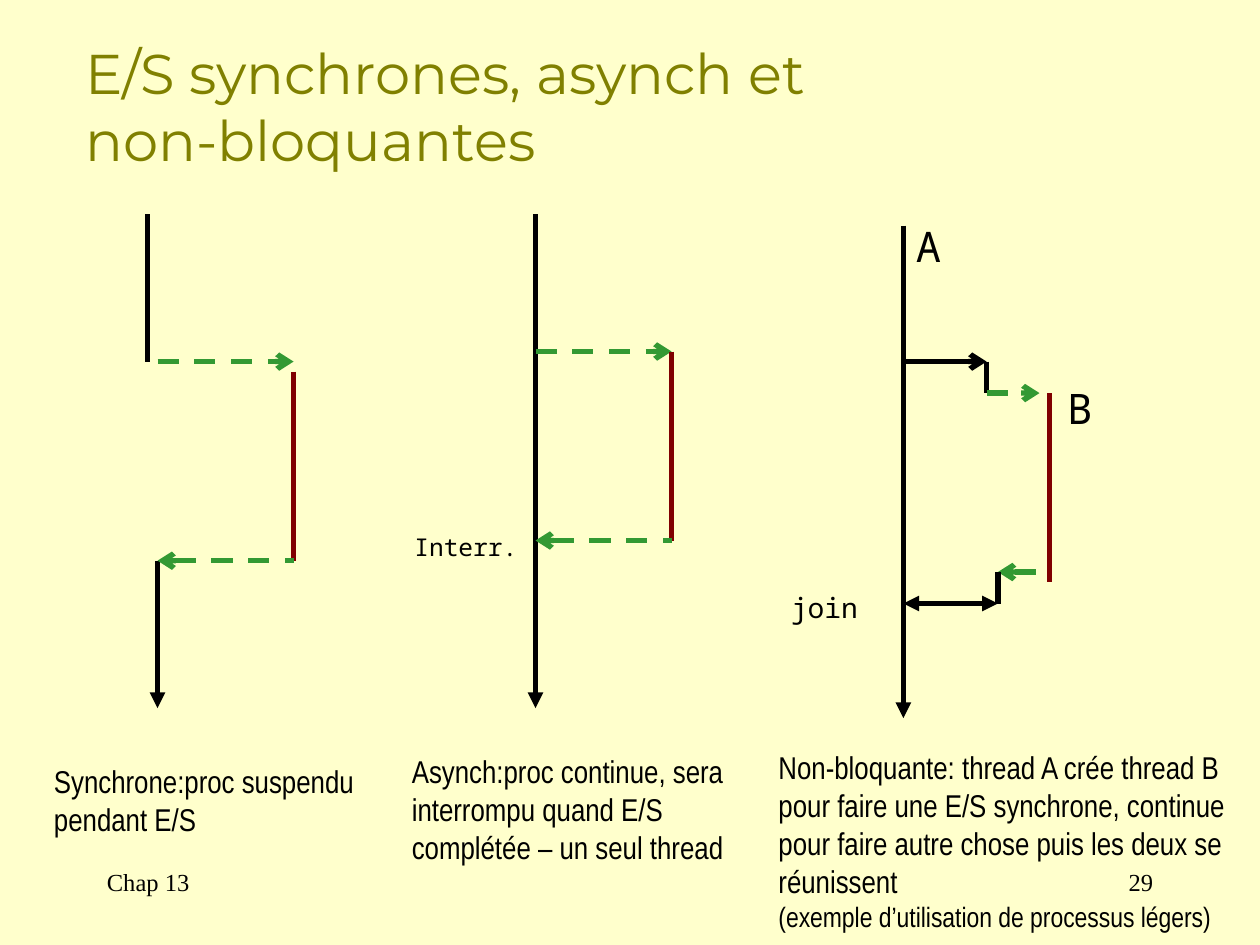
from lxml.etree import SubElement
from pptx import Presentation
from pptx.dml.color import RGBColor
from pptx.enum.dml import MSO_LINE
from pptx.enum.shapes import MSO_CONNECTOR
from pptx.enum.text import MSO_ANCHOR, PP_ALIGN
from pptx.oxml.ns import qn
from pptx.util import Inches, Pt

CREAM = RGBColor(0xFF, 0xFF, 0xCC)
OLIVE = RGBColor(0x80, 0x80, 0x00)
BLACK = RGBColor(0x00, 0x00, 0x00)
MAROON = RGBColor(0x80, 0x00, 0x00)
GREEN = RGBColor(0x33, 0x99, 0x33)

SERIF = "Times New Roman"
NARROW = "Arial Narrow"
MONO = "Noto Sans Mono"


def add_text(slide, box, lines, font, color=BLACK, align=PP_ALIGN.LEFT,
             anchor=MSO_ANCHOR.TOP):
    """Add a text box; lines holds (text, size) for each paragraph."""
    frame = slide.shapes.add_textbox(*map(Inches, box)).text_frame
    frame.word_wrap = True
    frame.vertical_anchor = anchor
    for i, (text, size) in enumerate(lines):
        para = frame.add_paragraph() if i else frame.paragraphs[0]
        para.text = text
        para.alignment = align
        para.font.name = font
        para.font.size = Pt(size)
        para.font.color.rgb = color


def add_line(slide, start, end, color=BLACK, head=None, tail=None, dash=False):
    """Add a straight line; head is the arrow at start, tail at end."""
    line = slide.shapes.add_connector(
        MSO_CONNECTOR.STRAIGHT, *map(Inches, start + end))
    line.line.color.rgb = color
    line.line.width = Pt(3)
    if dash:
        line.line.dash_style = MSO_LINE.DASH
    props = line.line._get_or_add_ln()
    for tag, kind in (("a:headEnd", head), ("a:tailEnd", tail)):
        if kind:
            SubElement(props, qn(tag), type=kind)
    SubElement(line._element.spPr, qn("a:effectLst"))


def add_flow(slide, x, top, end):
    """Black timeline of a process, pointing down."""
    add_line(slide, (x, top), (x, end), tail="triangle")


def add_device(slide, x, top):
    """Maroon bar for the time of the I/O itself."""
    add_line(slide, (x, top), (x, top + 1.5), MAROON)


def add_call(slide, left, right, y):
    add_line(slide, (left, y), (right, y), GREEN, tail="arrow", dash=True)


def add_reply(slide, left, right, y):
    add_line(slide, (left, y), (right, y), GREEN, head="arrow", dash=True)


def draw_sync(slide):
    add_line(slide, (1.17, 1.7), (1.17, 2.87))
    add_flow(slide, 1.25, 4.45, 5.62)
    add_device(slide, 2.33, 2.95)
    add_call(slide, 1.25, 2.33, 2.87)
    add_reply(slide, 1.25, 2.33, 4.45)
    add_text(slide, (0.33, 6, 2.58, 0.7),
             [("Synchrone:proc suspendu pendant E/S", 18)], NARROW)


def draw_async(slide):
    add_flow(slide, 4.25, 1.7, 5.62)
    add_call(slide, 4.25, 5.33, 2.79)
    add_device(slide, 5.33, 2.79)
    add_reply(slide, 4.25, 5.33, 4.29)
    add_text(slide, (3.19, 4.17, 1.05, 0.33), [("Interr.", 14)], MONO)
    add_text(slide, (3.17, 5.92, 2.75, 1.46),
             [("Asynch:proc continue, sera interrompu quand E/S "
               "complétée – un seul thread", 18)], NARROW)


def draw_threads(slide):
    add_flow(slide, 7.17, 1.79, 5.7)
    # Thread B starts
    add_line(slide, (7.83, 2.87), (7.83, 3.12))
    add_call(slide, 7.83, 8.25, 3.12)
    add_device(slide, 8.33, 3.12)
    # Thread B comes back
    add_reply(slide, 7.92, 8.33, 4.54)
    add_line(slide, (7.92, 4.54), (7.92, 4.79))
    # Fork and join with thread A
    add_line(slide, (7.17, 2.87), (7.83, 2.87), tail="arrow")
    add_line(slide, (7.17, 4.79), (7.92, 4.79),
             head="triangle", tail="triangle")
    # Labels
    add_text(slide, (7.17, 1.7, 0.58, 0.5), [("A", 24)], MONO)
    add_text(slide, (8.37, 2.99, 0.75, 0.5), [("B", 24)], MONO)
    add_text(slide, (6.18, 4.64, 0.87, 0.37), [("join", 16)], MONO)
    add_text(slide, (6.08, 5.89, 3.92, 2.04),
             [("Non-bloquante: thread A crée thread B pour faire une E/S "
               "synchrone, continue pour faire autre chose puis les deux "
               "se réunissent", 18),
              ("(exemple d’utilisation de processus légers)", 16)], NARROW)


def main():
    deck = Presentation()
    deck.slide_width, deck.slide_height = Inches(10), Inches(7.5)
    slide = deck.slides.add_slide(deck.slide_layouts[6])
    slide.background.fill.solid()
    slide.background.fill.fore_color.rgb = CREAM

    # Footer
    add_text(slide, (0.75, 6.83, 2.08, 0.5), [("Chap 13", 14)], SERIF)
    add_text(slide, (7.17, 6.83, 2.08, 0.5), [("29", 14)], SERIF,
             align=PP_ALIGN.RIGHT)

    # Title
    add_text(slide, (0.58, 0.21, 8.5, 1.25),
             [("E/S synchrones, asynch et \vnon-bloquantes", 32)],
             "Montserrat", OLIVE, anchor=MSO_ANCHOR.MIDDLE)

    # The three kinds of I/O, left to right
    draw_sync(slide)
    draw_async(slide)
    draw_threads(slide)
    deck.save("out.pptx")


if __name__ == "__main__":
    main()
